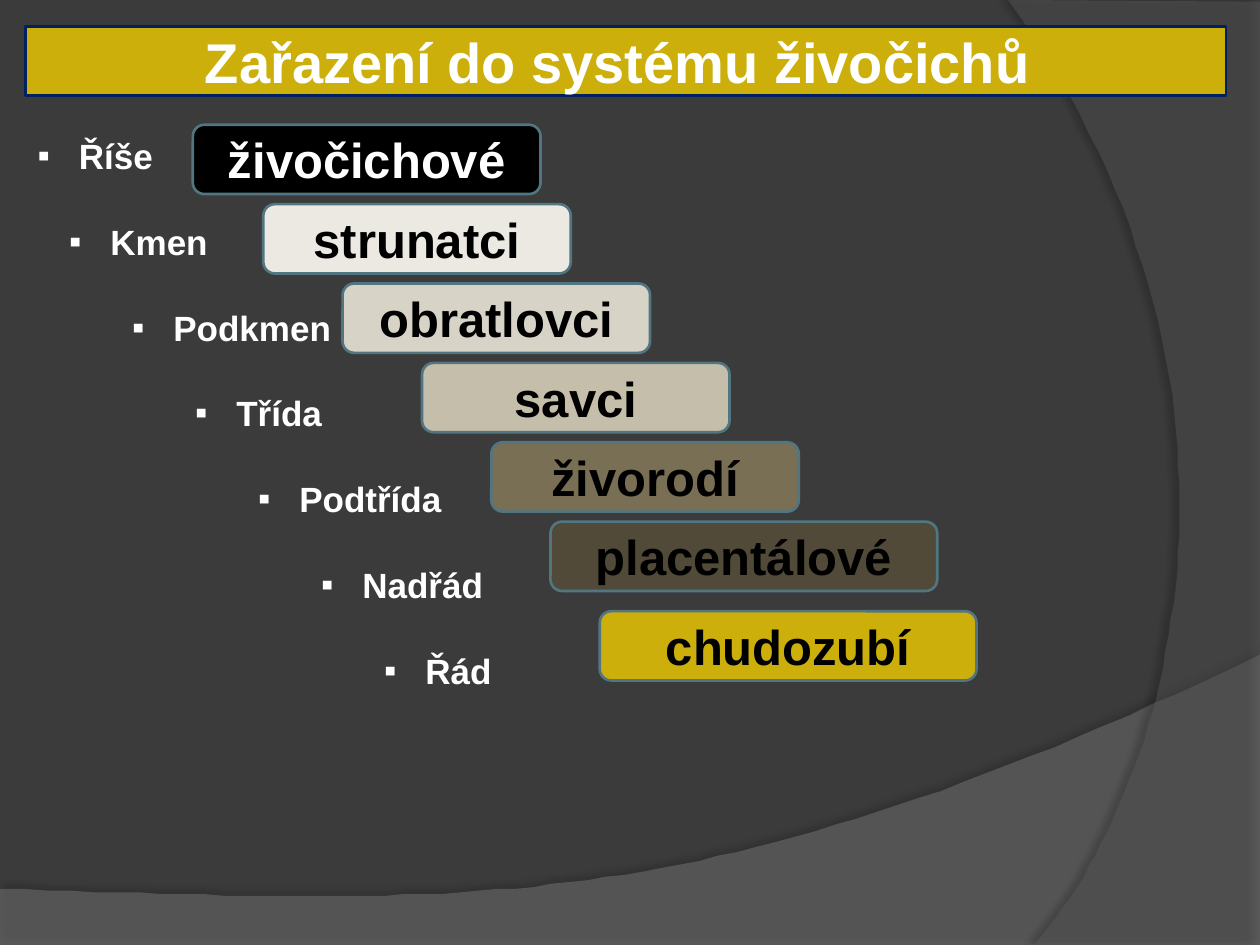
from lxml import etree
from pptx import Presentation
from pptx.dml.color import RGBColor
from pptx.enum.shapes import MSO_SHAPE
from pptx.enum.text import MSO_ANCHOR, MSO_AUTO_SIZE, PP_ALIGN
from pptx.oxml.ns import qn
from pptx.util import Pt

ROUNDED = MSO_SHAPE.ROUNDED_RECTANGLE
MIDDLE = MSO_ANCHOR.MIDDLE
NO_AUTOFIT = MSO_AUTO_SIZE.NONE
CENTER = PP_ALIGN.CENTER

THEME = {
    "font": "Arial",
    "background": "3B3B3B", "wave": "7F7F7F", "arc": "5E5E5E", "shadow": "000000",
    "gold": "CCAF0A", "title_line": "002060", "rank_line": "517682",
    "light": "FFFFFF", "dark": "000000",
    "title_size": 32, "label_size": 20, "rank_size": 28, "line": 1.5,
}

TITLE = "Zařazení do systému živočichů "
RANKS = [
    (" Říše", "živočichové", 110.2, 198.7, "000000", "light"),
    (" Kmen", "strunatci", 150.5, 175.7, "ECE9E3", "dark"),
    (" Podkmen", "obratlovci", 195.8, 175.7, "D8D3C7", "dark"),
    (" Třída", "savci", 241.2, 175.7, "C5BEAB", "dark"),
    (" Podtřída", "živorodí", 280.8, 175.7, "796F54", "dark"),
    (" Nadřád", "placentálové", 314.6, 221, "514A38", "dark"),
    (" Řád", "chudozubí", 342.7, 215.3, THEME["gold"], "dark"),
]
BAR_HEIGHT = 39.6
FIRST_TOP, ROW_STEP, LAST_EXTRA = 71.3, 45.36, 5.8
LABEL_STEP, LABEL_LINE = 48, 23
LABEL_INDENT, HANGING = 36, 18

WAVE = {"start": (0, 507.6), "lines": [(0, 540), (720, 540), (720, 374.4)],
        "curve": [(402.5, 524.9), (281.5, 517.7), (0, 507.6)],
        "fill": "wave", "alpha": 45, "shadow": (35, 4, 3.5, 270)}
ARC = {"start": (720, 1.4), "lines": [(720, 540), (591.1, 540)],
       "curve": [(673.2, 445.7), (733, 216), (576, 0)],
       "fill": "arc", "alpha": 40, "shadow": (45, 4, 4, 180)}


def color(value):
    return RGBColor.from_string(value)


def curve_points(start, controls, steps=60):
    corners = [start, *controls]
    for step in range(1, steps + 1):
        t = step / steps
        weights = ((1 - t) ** 3, 3 * t * (1 - t) ** 2, 3 * t * t * (1 - t), t ** 3)
        yield tuple(sum(w * corner[axis] for w, corner in zip(weights, corners))
                    for axis in (0, 1))


def add_alpha(color_element, percent):
    etree.SubElement(color_element, qn("a:alpha"), val=str(percent * 1000))


def add_sweep(slide, sweep):
    points = sweep["lines"] + list(curve_points(sweep["lines"][-1], sweep["curve"]))
    builder = slide.shapes.build_freeform(*sweep["start"], scale=Pt(1))
    builder.add_line_segments(points, close=True)
    shape = builder.convert_to_shape()
    shape.fill.solid()
    shape.fill.fore_color.rgb = color(THEME[sweep["fill"]])
    shape.line.fill.background()
    shape.shadow.inherit = False
    properties = shape._element.spPr
    add_alpha(properties.find(qn("a:solidFill"))[0], sweep["alpha"])
    opacity, blur, distance, angle = sweep["shadow"]
    outer = etree.SubElement(properties.find(qn("a:effectLst")), qn("a:outerShdw"),
                             blurRad=str(int(Pt(blur))), dist=str(int(Pt(distance))),
                             dir=str(angle * 60000), algn="ctr", rotWithShape="0")
    add_alpha(etree.SubElement(outer, qn("a:srgbClr"), val=THEME["shadow"]), opacity)


def add_text(paragraph, text, size, text_color):
    run = paragraph.add_run()
    run.text = text
    run.font.name = THEME["font"]
    run.font.size = Pt(size)
    run.font.bold = True
    run.font.color.rgb = color(text_color)


def place(shape, left, top, width, height):
    shape.left, shape.top, shape.width, shape.height = map(Pt, (left, top, width, height))


def style_bar(shape, text, size, fill, line, text_color):
    shape.fill.solid()
    shape.fill.fore_color.rgb = color(fill)
    shape.line.color.rgb = color(line)
    shape.line.width = Pt(THEME["line"])
    frame = shape.text_frame
    frame.auto_size = NO_AUTOFIT
    frame.word_wrap = True
    frame.vertical_anchor = MIDDLE
    frame.margin_top = frame.margin_bottom = 0
    paragraph = frame.paragraphs[0]
    paragraph.alignment = CENTER
    add_text(paragraph, text, size, text_color)


def add_title(slide):
    title = slide.shapes.title
    place(title, 14.4, 15.1, 686.2, BAR_HEIGHT)
    geometry = etree.SubElement(title._element.spPr, qn("a:prstGeom"), prst="roundRect")
    etree.SubElement(geometry, qn("a:avLst"))
    style_bar(title, TITLE, THEME["title_size"], THEME["gold"],
              THEME["title_line"], THEME["light"])
    slide.shapes._spTree.append(title._element)


def add_labels(slide):
    box = slide.shapes.add_textbox(Pt(14.4), Pt(73.4), Pt(586.8), Pt(368.7))
    frame = box.text_frame
    frame.word_wrap = True
    for level, rank in enumerate(RANKS):
        paragraph = frame.add_paragraph() if level else frame.paragraphs[0]
        paragraph.level = level
        paragraph.line_spacing = 1.0
        paragraph.space_after = Pt(LABEL_STEP - LABEL_LINE)
        properties = paragraph._p.get_or_add_pPr()
        properties.set("marL", str(int(Pt(max(HANGING, level * LABEL_INDENT)))))
        properties.set("indent", str(-int(Pt(HANGING))))
        etree.SubElement(properties, qn("a:buFont"), typeface=THEME["font"])
        etree.SubElement(properties, qn("a:buChar"), char="▪")
        add_text(paragraph, rank[0], THEME["label_size"], THEME["light"])


def add_ranks(slide):
    for row, (_, name, left, width, fill, text_color) in enumerate(RANKS):
        top = FIRST_TOP + row * ROW_STEP
        if row == len(RANKS) - 1:
            top += LAST_EXTRA
        shape = slide.shapes.add_shape(ROUNDED, Pt(left), Pt(top), Pt(width), Pt(BAR_HEIGHT))
        shape.shadow.inherit = False
        style_bar(shape, name, THEME["rank_size"], fill,
                  THEME["rank_line"], THEME[text_color])


def main():
    presentation = Presentation()
    presentation.slide_width, presentation.slide_height = Pt(720), Pt(540)
    slide = presentation.slides.add_slide(presentation.slide_layouts[5])
    slide.background.fill.solid()
    slide.background.fill.fore_color.rgb = color(THEME["background"])
    for sweep in (WAVE, ARC):
        add_sweep(slide, sweep)
    add_title(slide)
    add_labels(slide)
    add_ranks(slide)
    presentation.save("out.pptx")


if __name__ == "__main__":
    main()
